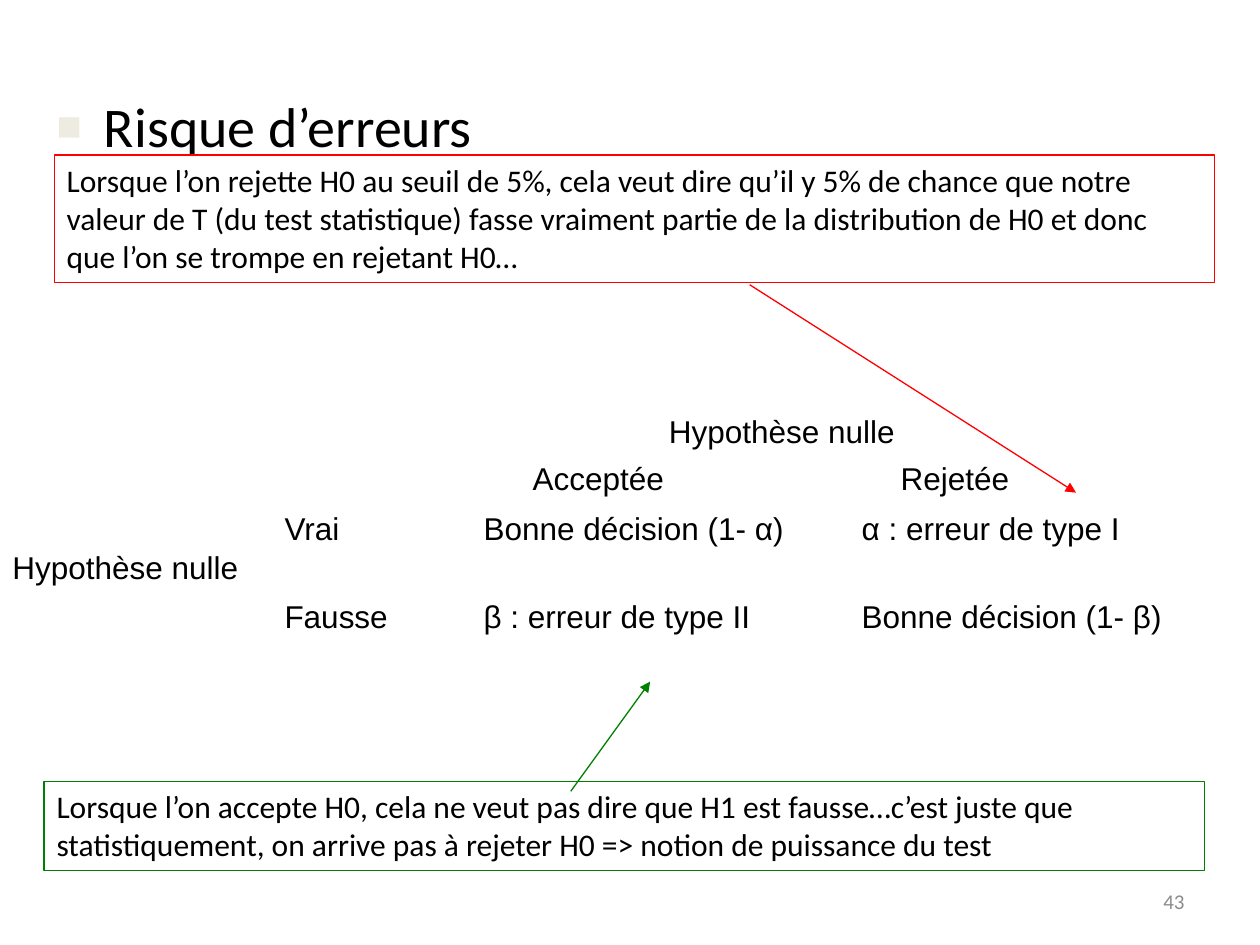
from dataclasses import dataclass

import lxml.etree
import pptx
import pptx.dml.color
import pptx.enum.shapes
import pptx.enum.text
import pptx.oxml.ns
import pptx.util

COLUMNS, ROWS = 100, 75


@dataclass(frozen=True)
class Theme:
    text: str = "000000"
    bullet: str = "EEECE1"
    rejection: str = "FF0000"
    acceptance: str = "008000"
    number: str = "8C8C8C"
    body_font: str = "Calibri"
    label_font: str = "Arial"
    heading_size: float = 32
    text_size: float = 18
    number_size: float = 12
    line_width: float = 0.75


@dataclass(frozen=True)
class Area:
    column: float
    row: float
    width: float
    height: float


@dataclass(frozen=True)
class Label:
    text: str
    column: float
    row: float
    width: float


@dataclass(frozen=True)
class Note:
    text: str
    area: Area
    color: str
    arrow_start: tuple[float, float]
    arrow_end: tuple[float, float]


THEME = Theme()
LABEL_HEIGHT = 4
HEADER_ROW, VERDICT_ROW, TRUE_ROW, MIDDLE_ROW, FALSE_ROW = 32.2, 35.9, 39.9, 43, 46.9
STATE_COLUMN, ACCEPTED_COLUMN, REJECTED_COLUMN = 21.6, 37.4, 67.4

LABELS = [
    Label("Hypothèse nulle", 52.1, HEADER_ROW, 19.9),
    Label("Hypothèse nulle", 0, MIDDLE_ROW, 19.9),
    Label("Vrai", STATE_COLUMN, TRUE_ROW, 6.5),
    Label("Fausse", STATE_COLUMN, FALSE_ROW, 10.2),
    Label("Acceptée", 41.3, VERDICT_ROW, 12.4),
    Label("Rejetée", 70.5, VERDICT_ROW, 10.6),
    Label("Bonne décision (1- α)", ACCEPTED_COLUMN, TRUE_ROW, 25.8),
    Label("Bonne décision (1- β)", REJECTED_COLUMN, FALSE_ROW, 25.8),
    Label("β : erreur de type II", ACCEPTED_COLUMN, FALSE_ROW, 23.4),
    Label("α : erreur de type I", REJECTED_COLUMN, TRUE_ROW, 23.2),
]

NOTES = [
    Note(
        "Lorsque l’on accepte H0, cela ne veut pas dire que H1 est fausse…c’est juste que "
        "statistiquement, on arrive pas à rejeter H0 => notion de puissance du test",
        Area(3.5, 62, 92.1, 7.1), THEME.acceptance, (45.3, 62.8), (51.6, 54.1),
    ),
    Note(
        "Lorsque l’on rejette H0 au seuil de 5%, cela veut dire qu’il y 5% de chance que notre "
        "valeur de T (du test statistique) fasse vraiment partie de la distribution de H0 et donc "
        "que l’on se trompe en rejetant H0…",
        Area(4.3, 12.3, 92.1, 10.1), THEME.rejection, (59.5, 22.6), (85.4, 39.1),
    ),
]

presentation = pptx.Presentation()
presentation.slide_width = pptx.util.Inches(10)
presentation.slide_height = pptx.util.Inches(7.5)


def across(columns: float) -> int:
    return round(presentation.slide_width * columns / COLUMNS)


def down(rows: float) -> int:
    return round(presentation.slide_height * rows / ROWS)


def bounds(area: Area) -> tuple[int, int, int, int]:
    return across(area.column), down(area.row), across(area.width), down(area.height)


def rgb(color: str) -> pptx.dml.color.RGBColor:
    return pptx.dml.color.RGBColor.from_string(color)


def write(shape, text: str, font: str, size: float, color: str = THEME.text,
          alignment=pptx.enum.text.PP_ALIGN.LEFT, wrap: bool = True) -> None:
    shape.text_frame.text = text
    shape.text_frame.word_wrap = wrap
    paragraph = shape.text_frame.paragraphs[0]
    paragraph.alignment = alignment
    run_font = paragraph.runs[0].font
    run_font.name = font
    run_font.size = pptx.util.Pt(size)
    run_font.color.rgb = rgb(color)


def add_element(parent, tag: str, **attributes: str):
    element = lxml.etree.SubElement(parent, pptx.oxml.ns.qn(tag))
    for name, value in attributes.items():
        element.set(name, value)
    return element


def format_heading(placeholder) -> None:
    placeholder.left, placeholder.top, placeholder.width, placeholder.height = bounds(
        Area(3.5, 6.8, 96.5, 7.1))
    write(placeholder, "Risque d’erreurs", THEME.body_font, THEME.heading_size)
    placeholder.text_frame.auto_size = pptx.enum.text.MSO_AUTO_SIZE.NONE
    properties = placeholder.text_frame.paragraphs[0]._p.get_or_add_pPr()
    indent = across(3.75)
    properties.set("marL", str(indent))
    properties.set("indent", str(-indent))
    add_element(add_element(properties, "a:buClr"), "a:srgbClr", val=THEME.bullet)
    add_element(properties, "a:buSzPct", val="75000")
    add_element(properties, "a:buFont", typeface=THEME.label_font)
    add_element(properties, "a:buChar", char="■")


def add_label(slide, label: Label) -> None:
    shape = slide.shapes.add_textbox(
        *bounds(Area(label.column, label.row, label.width, LABEL_HEIGHT)))
    write(shape, label.text, THEME.label_font, THEME.text_size, wrap=False)
    shape.text_frame.auto_size = pptx.enum.text.MSO_AUTO_SIZE.SHAPE_TO_FIT_TEXT


def add_note(slide, note: Note) -> None:
    shape = slide.shapes.add_shape(
        pptx.enum.shapes.MSO_SHAPE.RECTANGLE, *bounds(note.area))
    shape.shadow.inherit = False
    shape.fill.background()
    write(shape, note.text, THEME.body_font, THEME.text_size)
    shape.text_frame.vertical_anchor = pptx.enum.text.MSO_ANCHOR.TOP
    (start_column, start_row), (end_column, end_row) = note.arrow_start, note.arrow_end
    arrow = slide.shapes.add_connector(
        pptx.enum.shapes.MSO_CONNECTOR.STRAIGHT,
        across(start_column), down(start_row), across(end_column), down(end_row))
    for outlined in (shape, arrow):
        outlined.line.color.rgb = rgb(note.color)
        outlined.line.width = pptx.util.Pt(THEME.line_width)
    add_element(arrow.line._get_or_add_ln(), "a:tailEnd", type="triangle")
    add_element(arrow._element.spPr, "a:effectLst")


def add_slide_number(slide) -> None:
    shape = slide.shapes.add_textbox(*bounds(Area(71.7, 69.5, 23.3, 4)))
    write(shape, "43", THEME.body_font, THEME.number_size, THEME.number,
          pptx.enum.text.PP_ALIGN.RIGHT)
    shape.text_frame.vertical_anchor = pptx.enum.text.MSO_ANCHOR.MIDDLE


def main() -> None:
    slide = presentation.slides.add_slide(presentation.slide_layouts[1])
    title = slide.shapes.title._element
    title.getparent().remove(title)
    format_heading(slide.placeholders[1])
    for label in LABELS:
        add_label(slide, label)
    for note in NOTES:
        add_note(slide, note)
    add_slide_number(slide)
    presentation.save("out.pptx")


if __name__ == "__main__":
    main()
